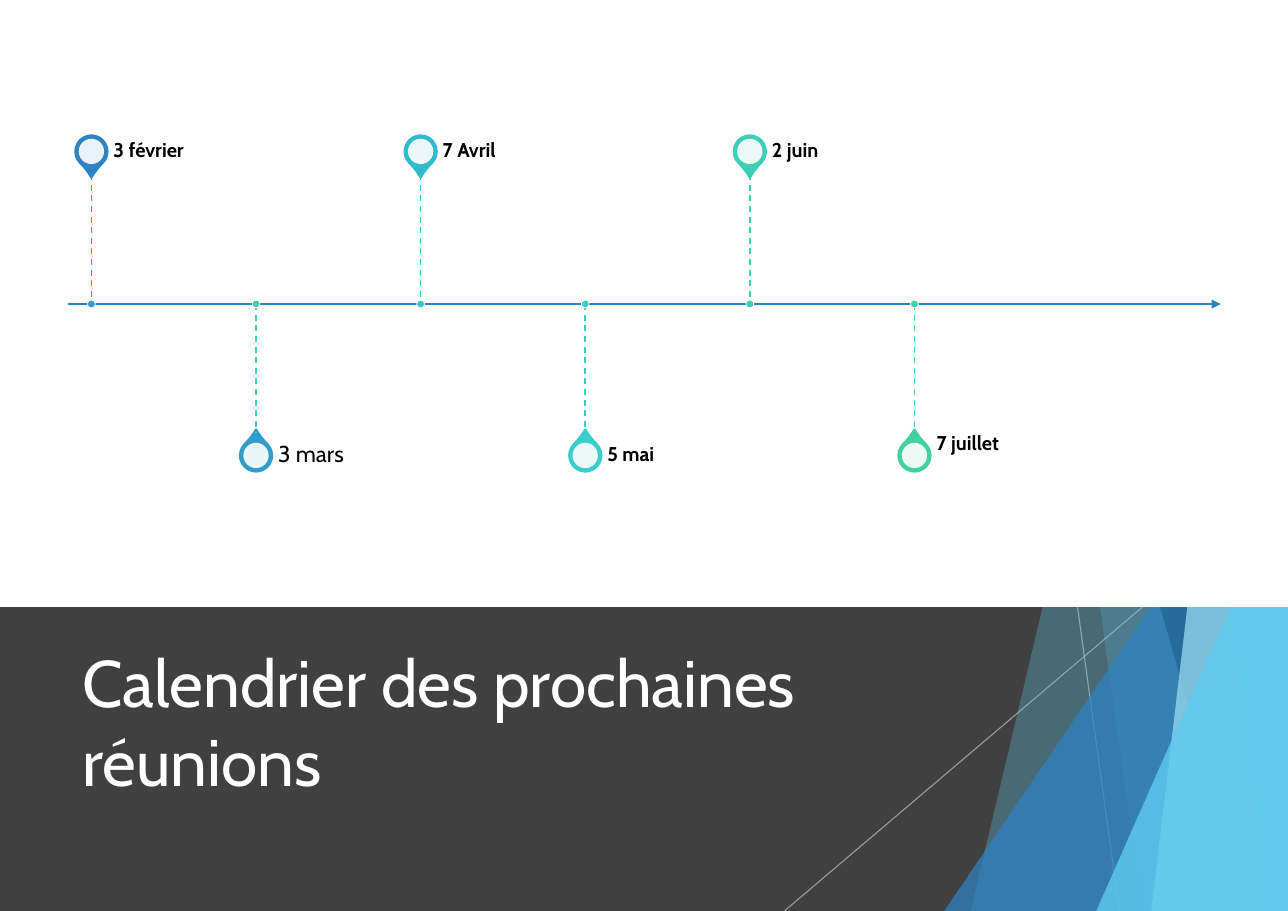
from dataclasses import dataclass

from lxml import etree
from pptx import Presentation
from pptx.dml.color import RGBColor
from pptx.enum.dml import MSO_LINE
from pptx.enum.shapes import MSO_CONNECTOR, MSO_SHAPE
from pptx.enum.text import MSO_ANCHOR
from pptx.oxml.ns import qn
from pptx.util import Inches, Pt

RECTANGLE = MSO_SHAPE.RECTANGLE
TRIANGLE = MSO_SHAPE.ISOSCELES_TRIANGLE
TEARDROP = MSO_SHAPE.TEAR
ELLIPSE = MSO_SHAPE.OVAL
STRAIGHT = MSO_CONNECTOR.STRAIGHT
DASH = MSO_LINE.DASH
TOP = MSO_ANCHOR.TOP
MIDDLE = MSO_ANCHOR.MIDDLE

WIDTH, HEIGHT = 11.69, 8.27
BAND_TOP = 5.51
FACET_TOP = -0.01
FONT = "Cabin"

AXIS_Y = 2.76
FIRST_X, LAST_X = 0.83, 8.30
PIN_SIZE, HOLE_SIZE, DOT_SIZE = 0.29, 0.23, 0.07
LABEL_GAP, LABEL_WIDTH, LABEL_HEIGHT = 0.2, 2.48, 0.41


@dataclass
class Facet:
    """Sloping facet that reaches the right edge; a peak makes it a triangle."""
    top_x: float
    bottom_x: float
    color: str
    opacity: int
    peak_y: float | None = None


@dataclass
class Side:
    """Placement of the pins on one side of the axis."""
    pin_y: float
    tip_y: float
    rotation: int


@dataclass
class Meeting:
    date: str
    pin_color: str
    stem_color: str
    side: Side
    size: int = 13
    bold: bool = True
    anchor: MSO_ANCHOR = MIDDLE


ABOVE = Side(1.375, 1.58, 135)
BELOW = Side(4.135, 3.93, 315)

FACETS = [
    Facet(10.77, 8.81, "5FCBEF", 30),
    Facet(9.21, 10.37, "5FCBEF", 20),
    Facet(WIDTH, 8.57, "2E83C3", 72, peak_y=3.67),
    Facet(8.95, 11.32, "226292", 70),
    Facet(11.43, 10.45, "9FE0F5", 70),
    Facet(10.49, 11.55, "5FCBEF", 65),
    Facet(WIDTH, 9.95, "5FCBEF", 80, peak_y=4.33),
]

MEETINGS = [
    Meeting("3 février", "2E83C3", "309DC8", ABOVE),
    Meeting("3 mars", "309DC8", "3CCFB6", BELOW, size=15, bold=False),
    Meeting("7 Avril", "31B9CD", "34C6CE", ABOVE),
    Meeting("5 mai", "37CECB", "39CEC4", BELOW),
    Meeting("2 juin", "3CCFB6", "3DCFB2", ABOVE),
    Meeting("7 juillet", "42D0A2", "42D0A2", BELOW, anchor=TOP),
]


def rgb(color: str) -> RGBColor:
    return RGBColor.from_string(color)


def set_opacity(parent, percent: int) -> None:
    color = parent.find(f"{qn('a:solidFill')}/{qn('a:srgbClr')}")
    etree.SubElement(color, qn("a:alpha"), val=str(percent * 1000))


def style_shape(shape, fill: str, opacity: int = 100,
                line: str | None = None, line_width: float = 1) -> None:
    shape.shadow.inherit = False
    shape.fill.solid()
    shape.fill.fore_color.rgb = rgb(fill)
    if opacity < 100:
        set_opacity(shape.element.spPr, opacity)
    if line:
        shape.line.color.rgb = rgb(line)
        shape.line.width = Pt(line_width)
    else:
        shape.line.fill.background()


def add_preset(slide, kind, left: float, top: float, width: float, height: float,
               fill: str, **style):
    shape = slide.shapes.add_shape(
        kind, Inches(left), Inches(top), Inches(width), Inches(height))
    style_shape(shape, fill, **style)
    return shape


def add_centred(slide, kind, x: float, y: float, size: float, fill: str, **style):
    return add_preset(slide, kind, x - size / 2, y - size / 2, size, size, fill, **style)


def add_line(slide, start: tuple[float, float], end: tuple[float, float], color: str,
             width: float, opacity: int = 100, dash=None, arrow: bool = False) -> None:
    connector = slide.shapes.add_connector(
        STRAIGHT, *(Inches(value) for value in (*start, *end)))
    connector.line.color.rgb = rgb(color)
    connector.line.width = Pt(width)
    if dash:
        connector.line.dash_style = dash
    properties = connector.element.spPr
    outline = properties.find(qn("a:ln"))
    if opacity < 100:
        set_opacity(outline, opacity)
    if arrow:
        etree.SubElement(outline, qn("a:tailEnd"), type="triangle")
    etree.SubElement(properties, qn("a:effectLst"))


def add_text(slide, text: str, left: float, top: float, width: float, height: float, *,
             size: float, color: str = "000000", bold: bool = False, anchor=MIDDLE,
             spacing: float = 1.0, inset: float = 0.0) -> None:
    box = slide.shapes.add_textbox(
        Inches(left), Inches(top), Inches(width), Inches(height))
    frame = box.text_frame
    frame.word_wrap = True
    frame.vertical_anchor = anchor
    frame.margin_left = Inches(inset)
    frame.margin_right = Inches(0.1)
    frame.margin_top = frame.margin_bottom = Inches(inset / 2)
    paragraph = frame.paragraphs[0]
    paragraph.line_spacing = spacing
    run = paragraph.add_run()
    run.text = text
    run.font.name = FONT
    run.font.size = Pt(size)
    run.font.bold = bold
    run.font.color.rgb = rgb(color)


def add_facet(slide, facet: Facet) -> None:
    if facet.peak_y is not None:
        triangle = add_preset(
            slide, TRIANGLE, facet.bottom_x, facet.peak_y, WIDTH - facet.bottom_x,
            HEIGHT - facet.peak_y, facet.color, opacity=facet.opacity)
        triangle.adjustments[0] = 1
        return
    corners = [(Inches(x), Inches(y)) for x, y in (
        (facet.top_x, FACET_TOP), (WIDTH, FACET_TOP),
        (WIDTH, HEIGHT), (facet.bottom_x, HEIGHT))]
    builder = slide.shapes.build_freeform(*corners[0])
    builder.add_line_segments(corners[1:], close=True)
    style_shape(builder.convert_to_shape(), facet.color, facet.opacity)


def add_meeting(slide, meeting: Meeting, x: float) -> None:
    side = meeting.side
    pin = add_centred(slide, TEARDROP, x, side.pin_y, PIN_SIZE, meeting.pin_color,
                      line=meeting.pin_color, line_width=1.5)
    pin.adjustments[0] = 1.15
    pin.rotation = side.rotation
    add_centred(slide, ELLIPSE, x, side.pin_y, HOLE_SIZE, "FFFFFF", opacity=90)
    add_text(slide, meeting.date, x + LABEL_GAP, side.pin_y - LABEL_HEIGHT / 2,
             LABEL_WIDTH, LABEL_HEIGHT, size=meeting.size, bold=meeting.bold,
             anchor=meeting.anchor, spacing=0.9)
    stem = sorted((side.tip_y, AXIS_Y))
    add_line(slide, (x, stem[0]), (x, stem[1]), meeting.stem_color, 1, dash=DASH)
    add_centred(slide, ELLIPSE, x, AXIS_Y, DOT_SIZE, meeting.stem_color,
                line="FFFFFF", line_width=0.5)


def main() -> None:
    presentation = Presentation()
    presentation.slide_width = Inches(WIDTH)
    presentation.slide_height = Inches(HEIGHT)
    slide = presentation.slides.add_slide(presentation.slide_layouts[6])

    # Title band with facets
    add_preset(slide, RECTANGLE, 0, BAND_TOP, WIDTH, HEIGHT - BAND_TOP, "404040")
    for top_x, bottom_x in ((9.78, 10.16), (10.37, 7.12)):
        add_line(slide, (top_x, BAND_TOP), (bottom_x, HEIGHT), "BFBFBF", 0.75, opacity=70)
    for facet in FACETS:
        add_facet(slide, facet)
    add_text(slide, "Calendrier des prochaines réunions", 0.65, 5.75, 8.24, 1.59,
             size=43, color="FFFFFF", inset=0.1)

    # Timeline on a white panel
    add_preset(slide, RECTANGLE, 0, 0, WIDTH, BAND_TOP, "FFFFFF")
    add_line(slide, (0.62, AXIS_Y), (11.08, AXIS_Y), "2E83C3", 1.5, arrow=True)
    step = (LAST_X - FIRST_X) / (len(MEETINGS) - 1)
    for index, meeting in enumerate(MEETINGS):
        add_meeting(slide, meeting, FIRST_X + index * step)

    presentation.save("out.pptx")


if __name__ == "__main__":
    main()
